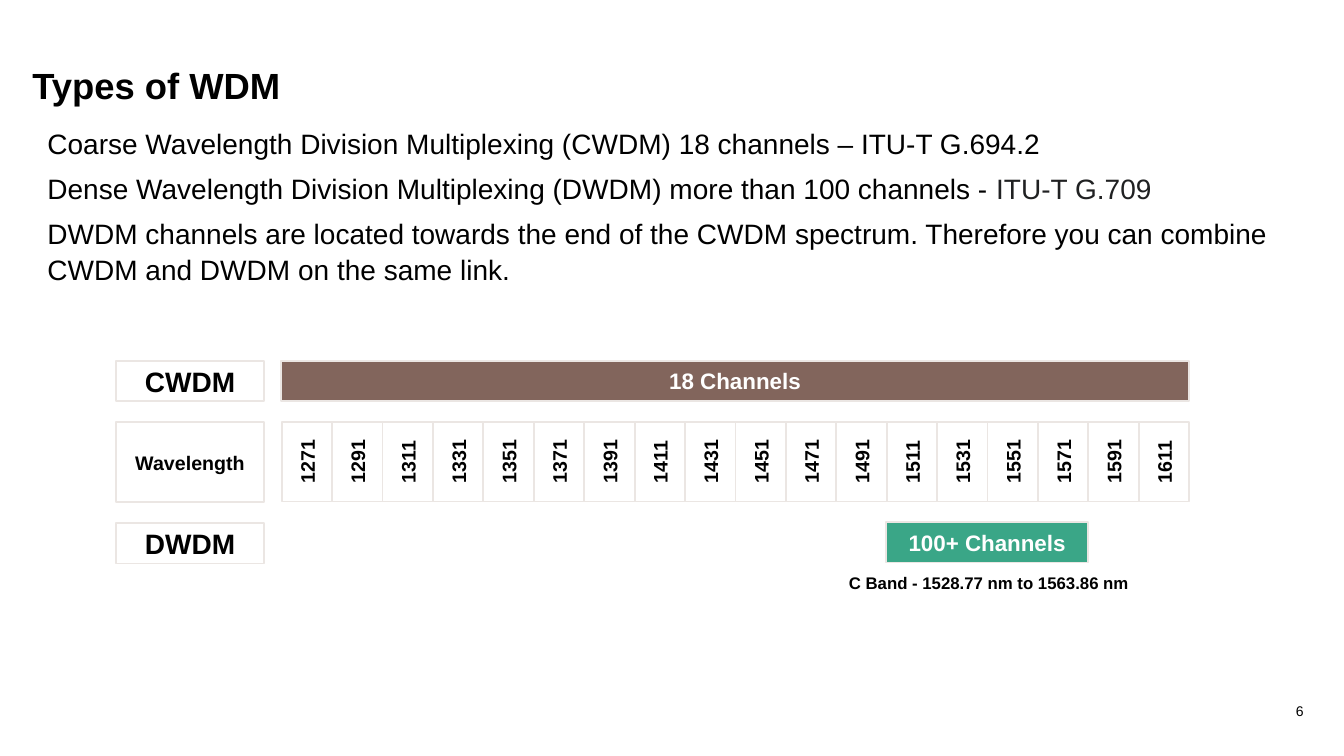
from dataclasses import dataclass

from pptx import Presentation
from pptx.dml.color import RGBColor as RGB
from pptx.enum.shapes import MSO_SHAPE as Preset
from pptx.enum.text import MSO_ANCHOR as Anchor, MSO_AUTO_SIZE as Fit, PP_ALIGN as Align
from pptx.util import Pt

EMU_PER_PX = 9144  # 100 px to the inch


@dataclass(frozen=True)
class Theme:
    font: str = "Arial"
    ink: str = "000000"
    soft_ink: str = "202122"
    paper: str = "FFFFFF"
    border: str = "EBE6E3"
    cwdm: str = "82655C"
    dwdm: str = "3AA687"
    title: int = 26
    body: int = 20
    channels: int = 16
    wavelength: int = 14
    caption: int = 12
    page: int = 10
    border_width: float = 1.25


THEME = Theme()
NO_INSETS = dict.fromkeys(
    ("margin_left", "margin_top", "margin_right", "margin_bottom"), 0)

STATEMENTS = [
    [("Coarse Wavelength Division Multiplexing (CWDM) 18 channels – ITU-T G.694.2", THEME.ink)],
    [("Dense Wavelength Division Multiplexing (DWDM) more than 100 channels - ", THEME.ink),
     ("ITU-T G.709", THEME.soft_ink)],
    [("DWDM channels are located towards the end of the CWDM spectrum. "
      "Therefore you can combine CWDM and DWDM on the same link.", THEME.ink)],
]

# Spectrum geometry in px
LABEL_LEFT, LABEL_WIDTH = 115, 147
SPECTRUM_LEFT, CHANNEL_WIDTH = 279, 50
CWDM_TOP, WAVELENGTH_TOP, DWDM_TOP = 358, 419, 518
BAR_HEIGHT, WAVELENGTH_HEIGHT = 40, 79
WAVELENGTHS = range(1271, 1612, 20)
C_BAND_START, C_BAND_CHANNELS = 1511, 4


def px(*lengths):
    return [length * EMU_PER_PX for length in lengths]


def assign(target, values):
    for name, value in values.items():
        setattr(target, name, value)


def write(paragraph, runs, size, bold=False, **layout):
    assign(paragraph, layout)
    for words, color in runs:
        run = paragraph.add_run()
        run.text = words
        assign(run.font, {"name": THEME.font, "size": Pt(size), "bold": bold})
        run.font.color.rgb = RGB.from_string(color)


def add_title(slide, words, box):
    title = slide.shapes.title
    assign(title, dict(zip(("left", "top", "width", "height"), px(*box))))
    assign(title.text_frame, {**NO_INSETS, "vertical_anchor": Anchor.BOTTOM,
                              "auto_size": Fit.NONE, "word_wrap": True})
    write(title.text_frame.paragraphs[0], [(words, THEME.ink)], THEME.title, True,
          alignment=Align.LEFT, line_spacing=Pt(32))


def add_text(slide, box, paragraphs, size, frame, bold=False, **layout):
    text = slide.shapes.add_textbox(*px(*box)).text_frame
    assign(text, {"word_wrap": True, **frame})
    for index, runs in enumerate(paragraphs):
        paragraph = text.add_paragraph() if index else text.paragraphs[0]
        write(paragraph, runs, size, bold, **layout)


def add_block(slide, box, words, size, fill=THEME.paper, color=THEME.ink, rotation=0):
    block = slide.shapes.add_shape(Preset.RECTANGLE, *px(*box))
    block.rotation = rotation
    block.shadow.inherit = False
    block.fill.solid()
    block.fill.fore_color.rgb = RGB.from_string(fill)
    block.line.color.rgb = RGB.from_string(THEME.border)
    block.line.width = Pt(THEME.border_width)
    assign(block.text_frame, {"vertical_anchor": Anchor.MIDDLE, "word_wrap": True})
    write(block.text_frame.paragraphs[0], [(words, color)], size, True,
          alignment=Align.CENTER)


def add_spectrum(slide):
    # Row labels
    for words, top, height, size in (
        ("CWDM", CWDM_TOP, BAR_HEIGHT, THEME.body),
        ("DWDM", DWDM_TOP + 1, BAR_HEIGHT, THEME.body),
        ("Wavelength", WAVELENGTH_TOP, WAVELENGTH_HEIGHT, THEME.wavelength),
    ):
        add_block(slide, (LABEL_LEFT, top, LABEL_WIDTH, height), words, size)

    # Wavelength cells, turned about their centres to read upwards
    turn = (WAVELENGTH_HEIGHT - CHANNEL_WIDTH) // 2
    for index, wavelength in enumerate(WAVELENGTHS):
        left = SPECTRUM_LEFT + index * CHANNEL_WIDTH - turn
        add_block(slide, (left, WAVELENGTH_TOP + turn, WAVELENGTH_HEIGHT, CHANNEL_WIDTH),
                  str(wavelength), THEME.wavelength, rotation=270)

    # Channel bars
    c_band_left = SPECTRUM_LEFT + WAVELENGTHS.index(C_BAND_START) * CHANNEL_WIDTH
    for words, left, top, count, fill in (
        ("18 Channels", SPECTRUM_LEFT, CWDM_TOP, len(WAVELENGTHS), THEME.cwdm),
        ("100+ Channels", c_band_left, DWDM_TOP, C_BAND_CHANNELS, THEME.dwdm),
    ):
        add_block(slide, (left, top, count * CHANNEL_WIDTH, BAR_HEIGHT), words,
                  THEME.channels, fill, THEME.paper)


def main():
    deck = Presentation()
    deck.slide_width, deck.slide_height = px(1333, 750)
    slide = deck.slides.add_slide(deck.slide_layouts[5])

    # Heading and statements
    add_title(slide, "Types of WDM", (32, 16, 1213, 90))
    add_text(slide, (47, 123, 1213, 512), STATEMENTS, THEME.body, NO_INSETS,
             line_spacing=Pt(26), space_before=Pt(6))

    # Page number
    add_text(slide, (1230, 690, 63, 24), [[("6", THEME.ink)]], THEME.page,
             {**NO_INSETS, "vertical_anchor": Anchor.BOTTOM}, alignment=Align.RIGHT)

    # Channel diagram and its caption
    add_spectrum(slide)
    add_text(slide, (832, 563, 301, 30),
             [[("C Band - 1528.77 nm to 1563.86 nm", THEME.ink)]], THEME.caption,
             {"word_wrap": False, "auto_size": Fit.SHAPE_TO_FIT_TEXT}, bold=True)

    deck.save("out.pptx")


if __name__ == "__main__":
    main()
